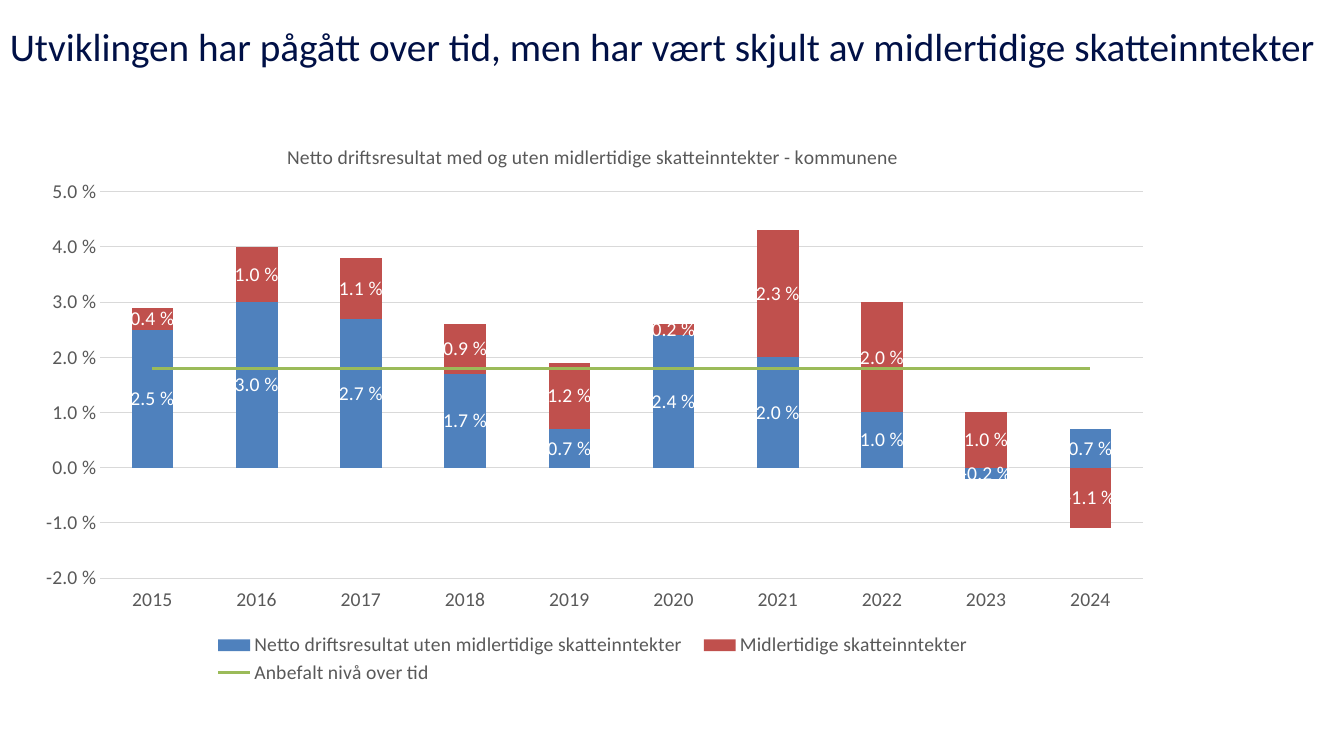
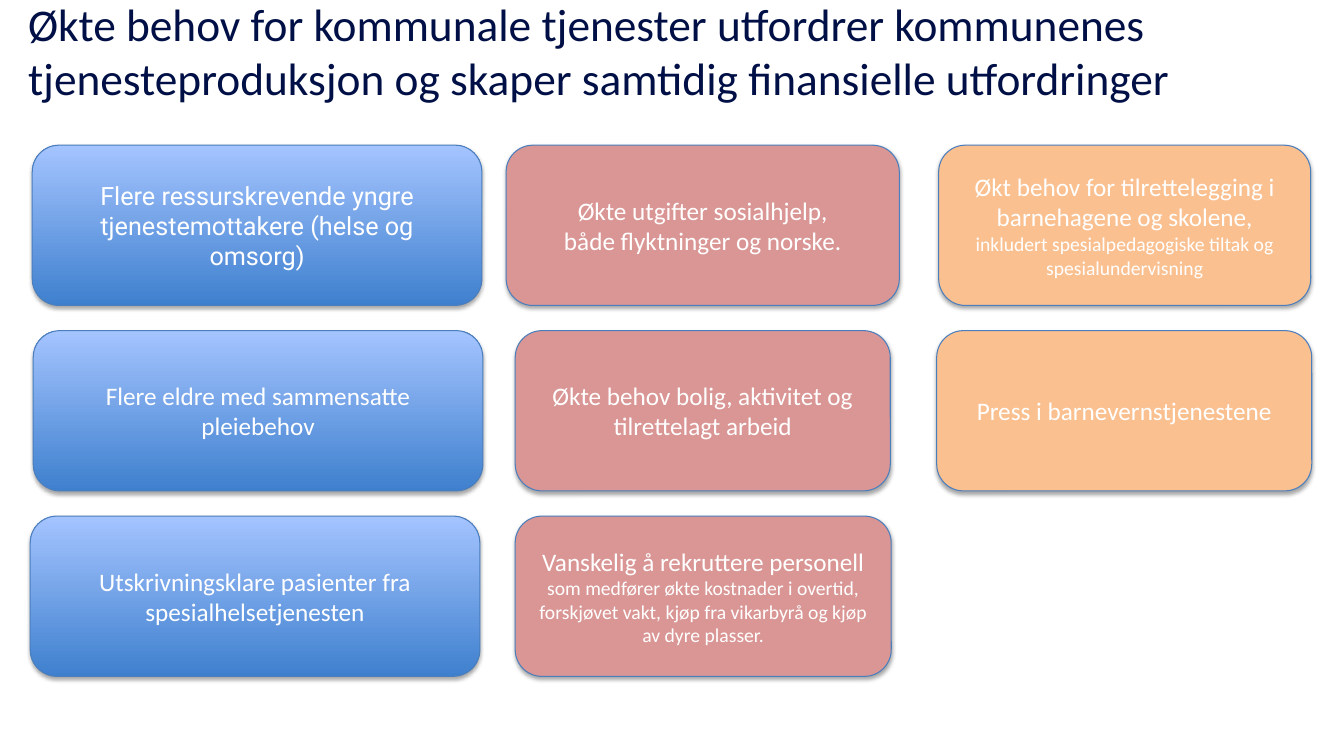
"""Build two slides on municipal finances and growing service needs."""

import copy
import dataclasses

import pptx
import pptx.chart.data
import pptx.dml.color
import pptx.enum.chart
import pptx.enum.shapes
import pptx.enum.text
import pptx.oxml
import pptx.oxml.ns
import pptx.util

Inches = pptx.util.Inches
Pt = pptx.util.Pt
qn = pptx.oxml.ns.qn


@dataclasses.dataclass(frozen=True)
class Theme:
    """Colours, fonts and type sizes."""

    font: str = "Calibri"
    alternate_font: str = "Roboto"
    title: str = "001046"
    white: str = "FFFFFF"
    grey: str = "595959"
    grid: str = "D9D9D9"
    blue: str = "4F81BD"
    red: str = "C0504D"
    green: str = "9BBB59"
    outline: str = "4B7EBC"
    rose: str = "D99694"
    peach: str = "FAC090"
    gradient: tuple = ("3F80CE", "A4C4FF")
    title_size: float = 28
    large_title_size: float = 32.4
    card_size: float = 18
    detail_size: float = 14
    chart_size: float = 14


THEME = Theme()
PERCENT = "0.0\\ %"
CARD_TOP, CARD_HEIGHT, CARD_GAP = 1.44, 1.59, 0.25
YEARS = [str(year) for year in range(2015, 2025)]
RESULT = [0.025, 0.03, 0.027, 0.017, 0.007, 0.024, 0.02, 0.01, -0.002, 0.007]
TEMPORARY = [0.004, 0.01, 0.011, 0.009, 0.012, 0.002, 0.023, 0.02, 0.01, -0.011]
RECOMMENDED = [0.018] * len(YEARS)

CARD_COLUMNS = [
    (THEME.gradient, [
        (0.32, 4.46, ["Flere ressurskrevende yngre tjenestemottakere (helse og omsorg)"],
         THEME.alternate_font),
        (0.33, 4.46, ["Flere eldre med sammensatte pleiebehov"], THEME.font),
        (0.3, 4.46, ["Utskrivningsklare pasienter fra spesialhelsetjenesten"], THEME.font),
    ]),
    (THEME.rose, [
        (5.02, 3.9, ["Økte utgifter sosialhjelp,\vbåde flyktninger og norske."], THEME.font),
        (5.11, 3.72, ["Økte behov bolig, aktivitet og tilrettelagt arbeid"], THEME.font),
        (5.11, 3.73, ["Vanskelig å rekruttere personell",
                       "som medfører økte kostnader i overtid, forskjøvet vakt, "
                       "kjøp fra vikarbyrå og kjøp av dyre plasser."], THEME.font),
    ]),
    (THEME.peach, [
        (9.31, 3.69, ["Økt behov for tilrettelegging i barnehagene og skolene,",
                      "inkludert spesialpedagogiske tiltak og spesialundervisning"],
         THEME.font),
        (9.29, 3.72, ["Press i barnevernstjenestene"], THEME.font),
    ]),
]


def rgb(value):
    """Turn a hex string into a colour."""
    return pptx.dml.color.RGBColor.from_string(value)


def set_font(font, size, color, name=THEME.font):
    """Set size, colour and typeface of a font."""
    font.size, font.name = Pt(size), name
    font.color.rgb = rgb(color)


def set_line(line, color, width=0.75):
    """Set colour and width of a line."""
    line.color.rgb = rgb(color)
    line.width = Pt(width)


def write_text(para, text, *, size, color, name=THEME.font, align=None):
    """Fill a paragraph with formatted text."""
    para.text = text
    para.alignment = align
    for span in para.runs:
        set_font(span.font, size, color, name)


def add_title(page, text, left, top, width, height, size):
    """Add a slide title."""
    box = page.shapes.add_textbox(*map(Inches, (left, top, width, height)))
    frame = box.text_frame
    frame.word_wrap = True
    frame.vertical_anchor = pptx.enum.text.MSO_ANCHOR.MIDDLE
    write_text(frame.paragraphs[0], text, size=size, color=THEME.title)


def add_shadow(shape):
    """Give a shape a soft shadow below it."""
    shape.shadow.inherit = False
    effects = shape._element.spPr.find(qn("a:effectLst"))
    effects.append(pptx.oxml.parse_xml(
        f'<a:outerShdw {pptx.oxml.ns.nsdecls("a")} blurRad="{Pt(3.1)}" dist="{Pt(1.8)}" '
        'dir="5400000" rotWithShape="0"><a:srgbClr val="000000">'
        '<a:alpha val="35000"/></a:srgbClr></a:outerShdw>'))


def fill_card(fill, color):
    """Fill with a solid colour or an upward gradient."""
    if isinstance(color, str):
        fill.solid()
        fill.fore_color.rgb = rgb(color)
        return
    fill.gradient()
    fill.gradient_angle = 90
    for stop, value in zip(fill.gradient_stops, color):
        stop.color.rgb = rgb(value)


def add_card(page, left, row, width, lines, color, name):
    """Add a rounded card with a heading and optional detail."""
    top = CARD_TOP + row * (CARD_HEIGHT + CARD_GAP)
    card = page.shapes.add_shape(pptx.enum.shapes.MSO_SHAPE.ROUNDED_RECTANGLE,
                                 *map(Inches, (left, top, width, CARD_HEIGHT)))
    fill_card(card.fill, color)
    set_line(card.line, THEME.outline)
    add_shadow(card)
    frame = card.text_frame
    frame.word_wrap = True
    frame.vertical_anchor = pptx.enum.text.MSO_ANCHOR.MIDDLE
    for index, text in enumerate(lines):
        para = frame.add_paragraph() if index else frame.paragraphs[0]
        write_text(para, text, size=THEME.detail_size if index else THEME.card_size,
                   color=THEME.white, name=name, align=pptx.enum.text.PP_ALIGN.CENTER)


def set_layout(element, after=None, inner=False, **edges):
    """Place a chart part by fractions of the chart area."""
    for old in element.findall(qn("c:layout")):
        element.remove(old)
    target = '<c:layoutTarget val="inner"/>' if inner else ""
    modes = "".join(f'<c:{edge}Mode val="edge"/>' for edge in "xy")
    values = "".join(f'<c:{edge} val="{value}"/>' for edge, value in edges.items())
    layout = pptx.oxml.parse_xml(
        f'<c:layout {pptx.oxml.ns.nsdecls("c")}><c:manualLayout>'
        f'{target}{modes}{values}</c:manualLayout></c:layout>')
    if after is None:
        element.insert(0, layout)
    else:
        element.find(qn(after)).addnext(layout)


def move_to_line_plot(chart, series, color, width):
    """Move a column series to a line plot on the same axes."""
    bars = chart.plots[0]._element
    element = series._element
    for flag in element.findall(qn("c:invertIfNegative")):
        element.remove(flag)
    lines = pptx.oxml.parse_xml(
        f'<c:lineChart {pptx.oxml.ns.nsdecls("c")}><c:grouping val="standard"/>'
        '<c:varyColors val="0"/><c:marker val="1"/></c:lineChart>')
    lines.insert(2, element)
    for axis in bars.findall(qn("c:axId")):
        lines.append(copy.deepcopy(axis))
    bars.addnext(lines)
    line = chart.plots[1].series[0]
    line.smooth = False
    line.marker.style = pptx.enum.chart.XL_MARKER_STYLE.NONE
    set_line(line.format.line, color, width)


def style_columns(series, color):
    """Colour a column series and label its values."""
    series.invert_if_negative = False
    series.format.fill.solid()
    series.format.fill.fore_color.rgb = rgb(color)
    labels = series.data_labels
    labels.show_value = True
    labels.number_format = PERCENT
    labels.number_format_is_linked = False
    set_font(labels.font, THEME.chart_size, THEME.white)


def style_axes(chart):
    """Format the year and percent axes."""
    years, percent = chart.category_axis, chart.value_axis
    for axis in (years, percent):
        axis.major_tick_mark = axis.minor_tick_mark = pptx.enum.chart.XL_TICK_MARK.NONE
        set_font(axis.tick_labels.font, THEME.chart_size, THEME.grey)
    years.tick_label_position = pptx.enum.chart.XL_TICK_LABEL_POSITION.LOW
    set_line(years.format.line, THEME.grid)
    percent.minimum_scale, percent.maximum_scale, percent.major_unit = -0.02, 0.05, 0.01
    percent.tick_labels.number_format = PERCENT
    percent.tick_labels.number_format_is_linked = False
    percent.format.line.fill.background()
    set_line(percent.major_gridlines.format.line, THEME.grid)


def add_result_chart(page):
    """Add stacked columns with a line for the recommended level."""
    data = pptx.chart.data.CategoryChartData(number_format=PERCENT)
    data.categories = YEARS
    data.add_series("Netto driftsresultat uten midlertidige skatteinntekter", RESULT)
    data.add_series("Midlertidige skatteinntekter", TEMPORARY)
    data.add_series("Anbefalt nivå over tid", RECOMMENDED)
    chart = page.shapes.add_chart(pptx.enum.chart.XL_CHART_TYPE.COLUMN_STACKED,
                                  *map(Inches, (0.2, 1.16, 11.36, 5.72)), data).chart
    set_font(chart.font, THEME.chart_size, THEME.grey)
    plot = chart.plots[0]
    plot.gap_width, plot.overlap, plot.vary_by_categories = 150, 100, False
    result, temporary, recommended = plot.series
    style_columns(result, THEME.blue)
    style_columns(temporary, THEME.red)
    style_axes(chart)
    move_to_line_plot(chart, recommended, THEME.green, 2.25)

    chart.has_title = True
    title = chart.chart_title
    write_text(title.text_frame.paragraphs[0],
               "Netto driftsresultat med og uten midlertidige skatteinntekter - kommunene",
               size=THEME.chart_size, color=THEME.grey)
    title.text_frame.paragraphs[0].font.bold = False
    for span in title.text_frame.paragraphs[0].runs:
        span.font.bold = False
    title.include_in_layout = False
    set_layout(title._element, after="c:tx", x=0.23, y=0.04)

    chart.has_legend = True
    legend = chart.legend
    legend.position = pptx.enum.chart.XL_LEGEND_POSITION.BOTTOM
    legend.include_in_layout = False
    set_font(legend.font, THEME.chart_size, THEME.grey)
    set_layout(legend._element, after="c:legendPos", x=0.16, y=0.89, w=0.68, h=0.1)
    set_layout(plot._element.getparent(), inner=True, x=0.07, y=0.13, w=0.91, h=0.67)


def build_result_page(page):
    """Build the slide about the net operating result."""
    add_title(page, "Utviklingen har pågått over tid, men har vært skjult av "
              "midlertidige skatteinntekter", 0, 0.18, 13.33, 0.56, THEME.title_size)
    add_result_chart(page)


def build_needs_page(page):
    """Build the slide about growing needs."""
    add_title(page, "Økte behov for kommunale tjenester utfordrer kommunenes "
              "tjenesteproduksjon og skaper samtidig finansielle utfordringer",
              0.18, 0.17, 12.96, 0.66, THEME.large_title_size)
    for color, cards in CARD_COLUMNS:
        for row, (left, width, lines, name) in enumerate(cards):
            add_card(page, left, row, width, lines, color, name)


def main():
    """Build and save the deck."""
    deck = pptx.Presentation()
    deck.slide_width, deck.slide_height = Inches(13.33), Inches(7.5)
    for build in (build_result_page, build_needs_page):
        build(deck.slides.add_slide(deck.slide_layouts[6]))
    deck.save("out.pptx")


if __name__ == "__main__":
    main()
